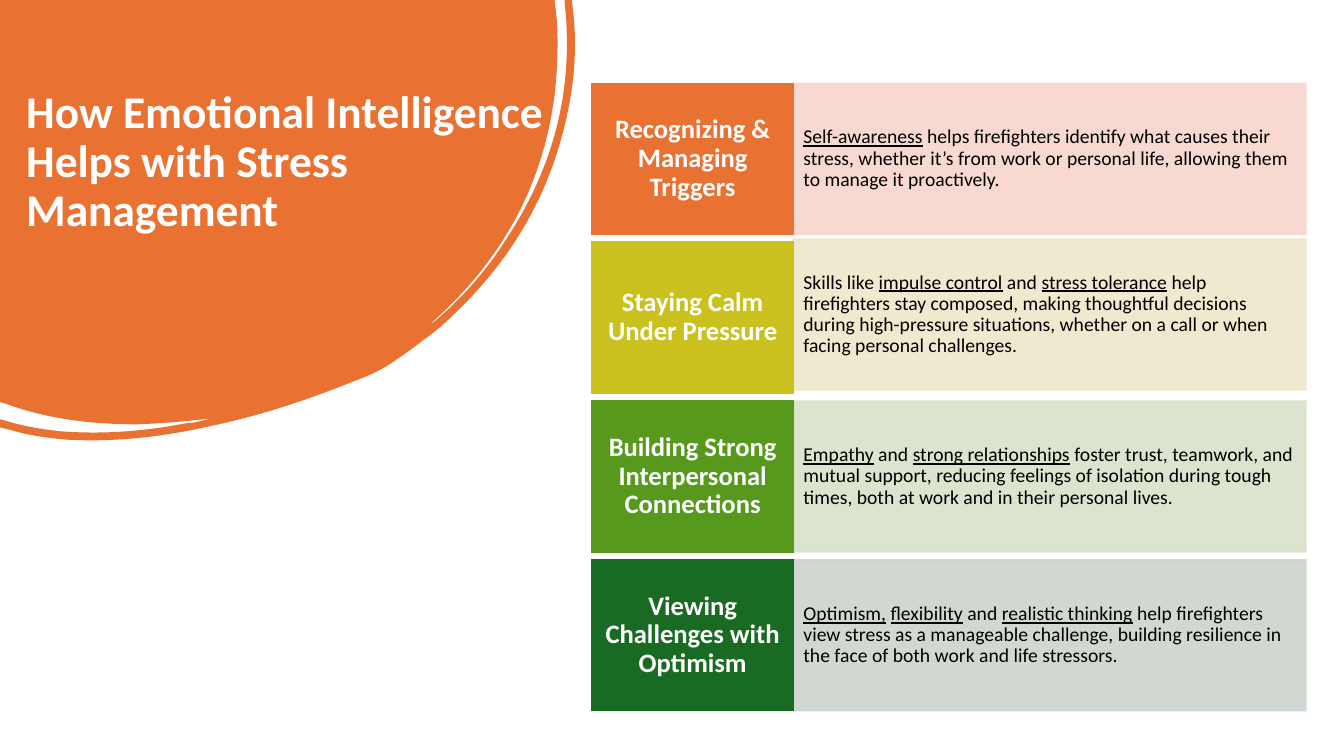
import dataclasses

import pptx
import pptx.dml.color
import pptx.enum.shapes
import pptx.enum.text
import pptx.oxml.ns
import pptx.util
from lxml import etree

Inches = pptx.util.Inches
qn = pptx.oxml.ns.qn
PP_ALIGN = pptx.enum.text.PP_ALIGN
ANCHOR = pptx.enum.text.MSO_ANCHOR


@dataclasses.dataclass(frozen=True)
class Theme:
    font: str = "Calibri"
    accent: str = "E97132"
    light: str = "FFFFFF"
    dark: str = "000000"
    title_size: float = 32.4
    label_size: float = 19
    body_size: float = 14
    line_width: float = 1.5
    panel_alpha: int = 90


THEME = Theme()

LABEL_LEFT, LABEL_WIDTH = 5.87, 2
PANEL_LEFT, PANEL_WIDTH = 7.87, 5.08
ROW_TOP, ROW_STEP, ROW_HEIGHT = 0.83, 1.576, 1.49

# Label, description (underscores enclose underlined words),
# label colour, panel colour, vertical shift of the panel
ROWS = [
    ("Recognizing & Managing Triggers",
     "_Self-awareness_ helps firefighters identify what causes their stress, "
     "whether it’s from work or personal life, allowing them to manage it "
     "proactively.", "E97132", "F7D5CE", 0),
    ("Staying Calm Under Pressure",
     "Skills like _impulse control_ and _stress tolerance_ help firefighters "
     "stay composed, making thoughtful decisions during high-pressure "
     "situations, whether on a call or when facing personal challenges.",
     "CBC11E", "EEE7CB", -0.03),
    ("Building Strong Interpersonal Connections",
     "_Empathy_ and _strong relationships_ foster trust, teamwork, and mutual "
     "support, reducing feelings of isolation during tough times, both at "
     "work and in their personal lives.", "56991D", "D8E2CA", 0),
    ("Viewing Challenges with Optimism",
     "_Optimism,_ _flexibility_ and _realistic thinking_ help firefighters "
     "view stress as a manageable challenge, building resilience in the face "
     "of both work and life stressors.", "196B24", "CCD4CD", 0),
]

# Outline in inches: two numbers are a straight line, six a Bézier curve
BLOB_SIZE = (5.71, 4.37)
BLOB = [
    (0, 0), (5.5, 0), (5.52, 0.17),
    (5.53, 0.26, 5.53, 0.36, 5.53, 0.45), (5.53, 1.01, 5.42, 1.54, 5.18, 2.04),
    (4.96, 2.49, 4.65, 2.88, 4.27, 3.21), (4.29, 3.21, 4.3, 3.19, 4.32, 3.18),
    (4.59, 2.95, 4.82, 2.69, 5.01, 2.39), (5.43, 1.76, 5.65, 1.07, 5.62, 0.3),
    (5.62, 0.21, 5.61, 0.12, 5.6, 0.03), (5.6, 0), (5.67, 0), (5.68, 0.07),
    (5.74, 0.54, 5.68, 1.02, 5.53, 1.5), (5.33, 2.14, 4.97, 2.68, 4.48, 3.14),
    (4.39, 3.23, 4.29, 3.31, 4.19, 3.38), (4.09, 3.46, 3.99, 3.53, 3.87, 3.61),
    (3.75, 3.69, 3.6, 3.75, 3.44, 3.81), (2.99, 3.99, 2.52, 4.14, 2.03, 4.24),
    (1.57, 4.34, 1.1, 4.39, 0.63, 4.36), (0.45, 4.34, 0.28, 4.32, 0.12, 4.27),
    (0, 4.24), (0, 4.16), (0.04, 4.17),
    (0.23, 4.23, 0.42, 4.26, 0.61, 4.28), (1.03, 4.31, 1.43, 4.28, 1.84, 4.2),
    (1.89, 4.2, 1.93, 4.19, 1.98, 4.18), (2.02, 4.17, 2.06, 4.16, 2.1, 4.15),
    (1.86, 4.18, 1.61, 4.2, 1.36, 4.21), (0.92, 4.21, 0.48, 4.16, 0.07, 4.01),
    (0, 3.99),
]


def rgb(value):
    return pptx.dml.color.RGBColor.from_string(value)


def apply(target, values):
    for name, value in values.items():
        setattr(target, name, value)


def paint(sp, color):
    sp.shadow.inherit = False
    sp.fill.solid()
    sp.fill.fore_color.rgb = rgb(color)


def set_alpha(sp, percent):
    """Make the fill and line of a shape partly transparent."""
    for color in sp.element.spPr.iter(qn("a:srgbClr")):
        alpha = etree.SubElement(color, qn("a:alpha"))
        alpha.set("val", str(percent * 1000))


def bend(line_to, controls):
    """Turn a straight segment into a Bézier curve with two control points."""
    line_to.tag = qn("a:cubicBezTo")
    for i in (0, 1):
        pt = etree.Element(qn("a:pt"))
        for axis, value in zip("xy", controls[2 * i:2 * i + 2]):
            pt.set(axis, str(int(Inches(value))))
        line_to.insert(i, pt)


def write(tf, text, size, color, bold=False, align=PP_ALIGN.LEFT,
          anchor=ANCHOR.MIDDLE, inset=(0.1, 0.05)):
    across, down = map(Inches, inset)
    apply(tf, {"word_wrap": True, "vertical_anchor": anchor,
               "auto_size": pptx.enum.text.MSO_AUTO_SIZE.NONE,
               "margin_left": across, "margin_right": across,
               "margin_top": down, "margin_bottom": down})
    p = tf.paragraphs[0]
    apply(p, {"alignment": align, "line_spacing": 0.9})
    for i, part in enumerate(text.split("_")):
        if part:
            r = p.add_run()
            r.text = part
            apply(r.font, {"name": THEME.font, "size": pptx.util.Pt(size),
                           "bold": bold, "underline": i % 2 == 1})
            r.font.color.rgb = rgb(color)


def add_blob(slide):
    start, *points = [tuple(map(Inches, segment[-2:])) for segment in BLOB]
    builder = slide.shapes.build_freeform(*start)
    builder.add_line_segments(points, close=True)
    sp = builder.convert_to_shape()
    outline = next(sp.element.spPr.iter(qn("a:path")))
    for line_to, segment in zip(outline.findall(qn("a:lnTo")), BLOB[1:]):
        if len(segment) == 6:
            bend(line_to, segment)
    width, height = map(Inches, BLOB_SIZE)
    apply(sp, {"width": width, "height": height})
    outline.set("w", str(int(width)))
    outline.set("h", str(int(height)))
    paint(sp, THEME.accent)
    sp.line.fill.background()


def add_title(slide, text):
    title = slide.shapes.title
    apply(title, {"left": Inches(0.16), "top": Inches(0.84),
                  "width": Inches(5.38), "height": Inches(2.22)})
    write(title.text_frame, text, THEME.title_size, THEME.light, bold=True,
          anchor=ANCHOR.TOP)
    # Bring the title in front of the blob
    title.element.getparent().append(title.element)


def add_box(slide, left, top, width, color):
    sp = slide.shapes.add_shape(pptx.enum.shapes.MSO_SHAPE.RECTANGLE, Inches(left),
                                Inches(top), Inches(width), Inches(ROW_HEIGHT))
    paint(sp, color)
    sp.line.color.rgb = rgb(color)
    sp.line.width = pptx.util.Pt(THEME.line_width)
    # Sharp corners
    miter = etree.SubElement(sp.element.spPr.find(qn("a:ln")), qn("a:miter"))
    miter.set("lim", "800000")
    return sp


def add_row(slide, top, label, description, label_color, panel_color, shift):
    panel = add_box(slide, PANEL_LEFT, top + shift, PANEL_WIDTH, panel_color)
    set_alpha(panel, THEME.panel_alpha)
    write(panel.text_frame, description, THEME.body_size, THEME.dark)
    box = add_box(slide, LABEL_LEFT, top, LABEL_WIDTH, label_color)
    write(box.text_frame, label, THEME.label_size, THEME.light, bold=True,
          align=PP_ALIGN.CENTER, inset=(0.07, 0.15))


def main():
    prs = pptx.Presentation()
    apply(prs, {"slide_width": Inches(13.33), "slide_height": Inches(7.5)})
    slide = prs.slides.add_slide(prs.slide_layouts.get_by_name("Title Only"))
    add_blob(slide)
    add_title(slide, "How Emotional Intelligence Helps with Stress Management")
    for i, row in enumerate(ROWS):
        add_row(slide, ROW_TOP + i * ROW_STEP, *row)
    prs.save("out.pptx")


if __name__ == "__main__":
    main()
